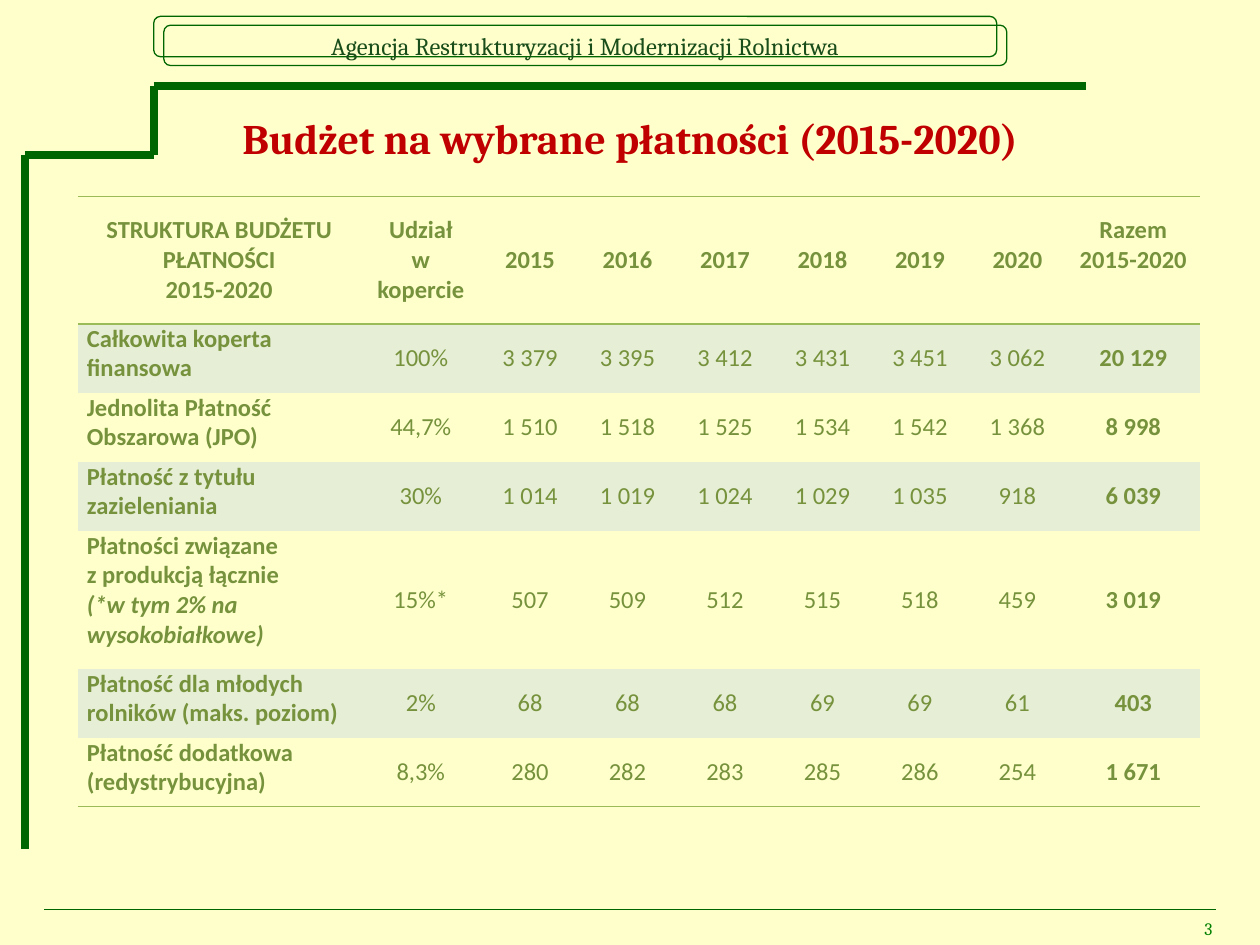
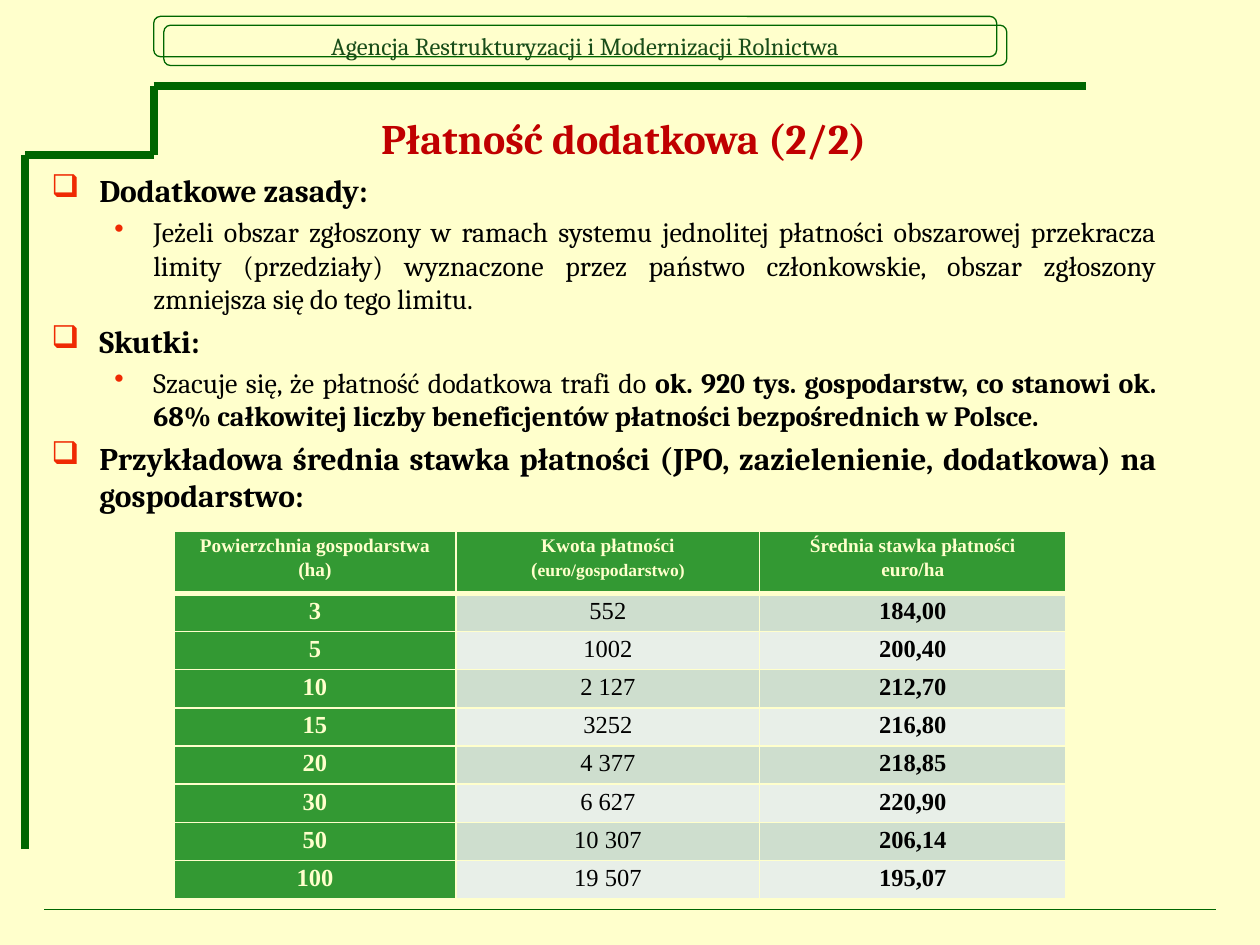
import dataclasses
import itertools

import lxml.etree
import pptx
import pptx.dml.color
import pptx.enum.shapes
import pptx.enum.text
import pptx.oxml.ns
import pptx.util

ALIGN = pptx.enum.text.PP_ALIGN
ANCHOR = pptx.enum.text.MSO_ANCHOR
SHAPE = pptx.enum.shapes.MSO_SHAPE
STRAIGHT = pptx.enum.shapes.MSO_CONNECTOR.STRAIGHT

SLIDE_WIDTH, SLIDE_HEIGHT = pptx.util.Inches(10), pptx.util.Inches(7.5)
GRID_COLUMNS, GRID_ROWS = 100, 75

CREAM, FRAME_GREEN, BLACK = "FFFFCC", "006600", "000000"
LEAF, OLIVE, PALE_LEAF = "9BBB59", "76923C", "E6EED5"
HEAD_GREEN, BANDS = "339933", ("CEDECE", "E8EFE8")
BULLET_RED = "EF2A03"


def look(name, size, color, bold=False, italic=False):
    """Return the font format of a span."""
    return {"name": name, "size": pptx.util.Pt(size), "color": color, "bold": bold, "italic": italic}


MASTHEAD_LOOK = look("Cambria", 14, "194D19")
TITLE_LOOK = look("Cambria", 24, "C00000", bold=True)
NUMBER_LOOK = look("Cambria", 10, "008000")
TOPIC_LOOK = look("Cambria", 18, BLACK, bold=True)
DETAIL_LOOK = look("Cambria", 16, BLACK)
BUDGET_LOOK = look("Calibri", 14, OLIVE)
RATE_LOOK = look("Times New Roman", 14, BLACK)

BUDGET_HEAD = [
    ["STRUKTURA BUDŻETU PŁATNOŚCI", "2015-2020"], ["Udział", "w kopercie"],
    *[[str(year)] for year in range(2015, 2021)], ["Razem", "2015-2020"],
]
BUDGET_ROWS = [
    (["Całkowita koperta finansowa"], "100%", "3 379", "3 395", "3 412", "3 431", "3 451", "3 062", "20 129"),
    (["Jednolita Płatność Obszarowa (JPO)"], "44,7%", "1 510", "1 518", "1 525", "1 534", "1 542", "1 368", "8 998"),
    (["Płatność z tytułu zazieleniania"], "30%", "1 014", "1 019", "1 024", "1 029", "1 035", "918", "6 039"),
    (["Płatności związane", "z produkcją łącznie", "(*w tym 2% na wysokobiałkowe)"],
     "15%*", "507", "509", "512", "515", "518", "459", "3 019"),
    (["Płatność dla młodych rolników (maks. poziom)"], "2%", "68", "68", "68", "69", "69", "61", "403"),
    (["Płatność dodatkowa (redystrybucyjna)"], "8,3%", "280", "282", "283", "285", "286", "254", "1 671"),
]
RATE_HEAD = [
    [[("Powierzchnia gospodarstwa", 11)], [("(ha)", 11)]],
    [[("Kwota płatności", 11)], [("(", 11), ("euro/gospodarstwo)", 10)]],
    [[("Średnia stawka płatności", 11)], [("euro/ha", 11)]],
]
RATE_ROWS = [
    ("3", "552", "184,00"), ("5", "1002", "200,40"), ("10", "2 127", "212,70"),
    ("15", "3252", "216,80"), ("20", "4 377", "218,85"), ("30", "6 627", "220,90"),
    ("50", "10 307", "206,14"), ("100", "19 507", "195,07"),
]
RULES = [
    ("❑", [("Dodatkowe zasady:", True)]),
    ("•", [("Jeżeli obszar zgłoszony w ramach systemu jednolitej płatności obszarowej przekracza limity "
            "(przedziały) wyznaczone przez państwo członkowskie, obszar zgłoszony zmniejsza się do tego "
            "limitu.", False)]),
    ("❑", [("Skutki:", True)]),
    ("•", [("Szacuje się, że płatność dodatkowa trafi do ", False),
           ("ok. 920 tys. gospodarstw, co stanowi ok. 68% całkowitej liczby beneficjentów płatności "
            "bezpośrednich w Polsce.", True)]),
    ("❑", [("Przykładowa średnia stawka płatności (JPO, zazielenienie, dodatkowa) na gospodarstwo:", True)]),
]


def across(columns):
    """Return the length of a number of grid columns."""
    return round(SLIDE_WIDTH * columns / GRID_COLUMNS)


def down(rows):
    """Return the length of a number of grid rows."""
    return round(SLIDE_HEIGHT * rows / GRID_ROWS)


@dataclasses.dataclass
class Box:
    """A region in grid columns and rows."""

    left: float
    top: float
    width: float
    height: float

    def place(self):
        """Return left, top, width and height as lengths."""
        return across(self.left), down(self.top), across(self.width), down(self.height)

    def moved(self, columns, rows):
        """Return the same region shifted on the grid."""
        return Box(self.left + columns, self.top + rows, self.width, self.height)


def rgb(color):
    """Turn a hex string into a colour."""
    return pptx.dml.color.RGBColor.from_string(color)


def write(frame, paragraphs, align, **formats):
    """Fill a text frame with paragraphs, each a list of (text, look) spans."""
    for index, spans in enumerate(paragraphs):
        para = frame.add_paragraph() if index else frame.paragraphs[0]
        for key, value in {"alignment": align, **formats}.items():
            setattr(para, key, value)
        for text, font_format in spans:
            span = para.add_run()
            span.text = text
            for key, value in font_format.items():
                if key == "color":
                    span.font.color.rgb = rgb(value)
                else:
                    setattr(span.font, key, value)


def add_text(page, box, paragraphs, align, anchor=ANCHOR.TOP):
    """Add a wrapping text box and return its frame."""
    frame = page.shapes.add_textbox(*box.place()).text_frame
    frame.word_wrap = True
    frame.vertical_anchor = anchor
    write(frame, paragraphs, align)
    return frame


def add_line(page, start, end, width):
    """Draw a straight green line between two grid points."""
    line = page.shapes.add_connector(STRAIGHT, across(start[0]), down(start[1]), across(end[0]), down(end[1]))
    line.line.color.rgb = rgb(FRAME_GREEN)
    line.line.width = pptx.util.Pt(width)
    properties = line._element.spPr
    lxml.etree.SubElement(properties, pptx.oxml.ns.qn("a:effectLst"))


def add_masthead(page, box):
    """Draw the doubled rounded band holding the agency's name."""
    for shift in ((0, 0), (0.8, 0.7)):
        band = page.shapes.add_shape(SHAPE.ROUNDED_RECTANGLE, *box.moved(*shift).place())
        band.shadow.inherit = False
        band.fill.background()
        band.line.color.rgb = rgb(FRAME_GREEN)
        band.line.width = pptx.util.Pt(0.75)
    band.text_frame.word_wrap = False
    band.text_frame.vertical_anchor = ANCHOR.MIDDLE
    write(band.text_frame, [[("Agencja Restrukturyzacji i Modernizacji Rolnictwa", MASTHEAD_LOOK)]], ALIGN.CENTER)


def add_stair(page, box):
    """Draw the stepped line along the left and top of the region."""
    step, middle = box.left + 10.2, box.top + 5.5
    corners = [(box.left, box.top + box.height), (box.left, middle), (step, middle),
               (step, box.top), (box.left + box.width, box.top)]
    for start, end in itertools.pairwise(corners):
        add_line(page, start, end, 4.5)


def add_footer(page, box, number):
    """Draw the bottom rule and, where given, the page number."""
    add_line(page, (box.left, box.top), (box.left + box.width, box.top), 0.25)
    if number:
        number_box = Box(box.left + box.width - 28.4, box.top + 0.2, 29.1, box.height)
        add_text(page, number_box, [[(number, NUMBER_LOOK)]], ALIGN.RIGHT)


def add_page(deck, title, title_box, number=None):
    """Add a blank slide with the shared frame and a title."""
    page = deck.slides.add_slide(deck.slide_layouts[6])
    page.background.fill.solid()
    page.background.fill.fore_color.rgb = rgb(CREAM)
    add_stair(page, Box(2, 6.8, 84.2, 60.6))
    add_masthead(page, Box(12.2, 1.3, 66.9, 3.2))
    add_footer(page, Box(3.5, 72.2, 93, 2.9), number)
    add_text(page, title_box, [[(title, TITLE_LOOK)]], ALIGN.CENTER, ANCHOR.MIDDLE)
    return page


def add_grid(page, box, widths, heights):
    """Add a plain table with the given column widths and row heights."""
    table = page.shapes.add_table(len(heights), len(widths), *box.place()).table
    table.first_row = table.horz_banding = False
    for column, width in zip(table.columns, widths):
        column.width = across(width)
    for row, height in zip(table.rows, heights):
        row.height = down(height)
    return table


def style_cell(cell, fill, edges, edge_color, anchor=ANCHOR.TOP):
    """Set the fill, margins, anchor and edge widths (keyed L, R, T, B) of a cell."""
    margins = {"margin_left": across(0.7), "margin_right": across(0.7), "margin_top": 0, "margin_bottom": 0}
    for key, value in {**margins, "vertical_anchor": anchor}.items():
        setattr(cell, key, value)
    properties = cell._tc.get_or_add_tcPr()
    for side in "LRTB":
        edge = lxml.etree.SubElement(properties, pptx.oxml.ns.qn(f"a:ln{side}"))
        if side in edges:
            edge.set("w", str(pptx.util.Pt(edges[side])))
            solid = lxml.etree.SubElement(edge, pptx.oxml.ns.qn("a:solidFill"))
            lxml.etree.SubElement(solid, pptx.oxml.ns.qn("a:srgbClr"), val=edge_color)
        else:
            lxml.etree.SubElement(edge, pptx.oxml.ns.qn("a:noFill"))
    if fill:
        cell.fill.solid()
        cell.fill.fore_color.rgb = rgb(fill)
    else:
        cell.fill.background()


def add_budget_table(page, box):
    """Add the table of payment budgets by year."""
    heights = [10.1, 5.48, 5.48, 5.48, 10.95, 5.48, 5.48]
    table = add_grid(page, box, [22.4, 9.6, *[7.74] * 6, 10.66], heights)
    rows = [BUDGET_HEAD] + [[label, *[[value] for value in values]] for label, *values in BUDGET_ROWS]
    last_row, last_column = len(rows) - 1, len(BUDGET_HEAD) - 1
    for row, cells in enumerate(rows):
        edges = {side: 1 for side, ruled in (("T", row < 2), ("B", row in (0, last_row))) if ruled}
        for column, lines in enumerate(cells):
            is_label = row > 0 and column == 0
            is_bold = row == 0 or column in (0, last_column)
            cell = table.cell(row, column)
            style_cell(cell, PALE_LEAF if row % 2 else None, edges, LEAF,
                       ANCHOR.TOP if is_label else ANCHOR.MIDDLE)
            paragraphs = [[(line, {**BUDGET_LOOK, "bold": is_bold, "italic": line.startswith("(*")})]
                          for line in lines]
            write(cell.text_frame, paragraphs, ALIGN.LEFT if is_label else ALIGN.CENTER)
    table.cell(0, last_column).margin_bottom = down(2.4)


def add_rules(page, box):
    """Add the bulleted rules and effects."""
    indents = {"❑": (0, 3.8, -3.8, TOPIC_LOOK), "•": (1, 8.1, -3.1, DETAIL_LOOK)}
    paragraphs = [[(text, {**indents[mark][3], "bold": bold}) for text, bold in spans] for mark, spans in RULES]
    frame = add_text(page, box, paragraphs, ALIGN.JUSTIFY)
    for index, (para, (mark, _)) in enumerate(zip(frame.paragraphs, RULES)):
        level, margin, indent, font_format = indents[mark]
        properties = para._p.get_or_add_pPr()
        properties.set("marL", str(across(margin)))
        properties.set("indent", str(across(indent)))
        tint = lxml.etree.SubElement(properties, pptx.oxml.ns.qn("a:buClr"))
        lxml.etree.SubElement(tint, pptx.oxml.ns.qn("a:srgbClr"), val=BULLET_RED)
        lxml.etree.SubElement(properties, pptx.oxml.ns.qn("a:buChar"), char=mark)
        para.level = level
        if index:
            para.space_before = pptx.util.Pt(font_format["size"].pt * 0.2)


def add_rate_table(page, box):
    """Add the table of average payment rates by farm area."""
    table = add_grid(page, box, [22.4, 24.1, 24.3], [4.9, *[3.03] * len(RATE_ROWS)])
    rows = [RATE_HEAD] + [[[[(value, 14)]] for value in values] for values in RATE_ROWS]
    for row, cells in enumerate(rows):
        edges = {"L": 1, "R": 1, "T": 3 if row == 1 else 1, "B": 3 if row == 0 else 1}
        for column, lines in enumerate(cells):
            is_head = row == 0 or column == 0
            cell = table.cell(row, column)
            style_cell(cell, HEAD_GREEN if is_head else BANDS[(row - 1) % 2], edges, CREAM)
            font_format = {**RATE_LOOK, "color": CREAM if is_head else BLACK, "bold": is_head or column == 2}
            paragraphs = [[(text, {**font_format, "size": pptx.util.Pt(size)}) for text, size in spans]
                          for spans in lines]
            write(cell.text_frame, paragraphs, ALIGN.CENTER, line_spacing=1.15)


def main():
    """Build and save the deck."""
    deck = pptx.Presentation()
    deck.slide_width, deck.slide_height = SLIDE_WIDTH, SLIDE_HEIGHT
    title_box = Box(7, 7.8, 85, 6.3)
    budget_page = add_page(deck, "Budżet na wybrane płatności (2015-2020)", title_box.moved(0.5, 0), "3")
    add_budget_table(budget_page, Box(6.2, 15.6, 89.1, 48.4))
    rate_page = add_page(deck, "Płatność dodatkowa (2/2)", title_box)
    add_rules(rate_page, Box(3.1, 13.1, 89.7, 58.8))
    add_rate_table(rate_page, Box(13.8, 42.2, 70.8, 29.1))
    deck.save("out.pptx")


if __name__ == "__main__":
    main()
